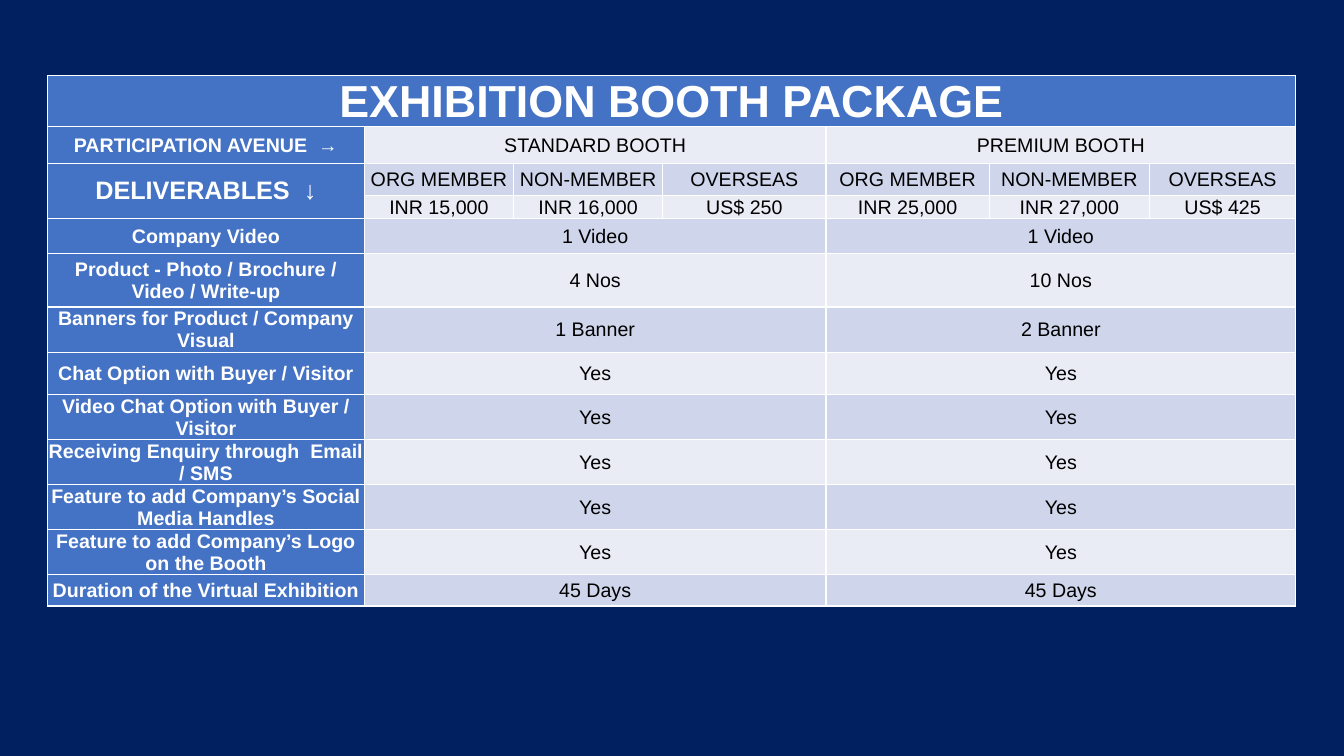
from dataclasses import dataclass

import lxml.etree
import pptx
import pptx.dml.color
import pptx.enum.text
import pptx.oxml.ns
import pptx.table
import pptx.util

COLORS: dict[str, str] = {
    "background": "002060",
    "header": "4472C4",
    "odd_band": "E9EBF5",
    "even_band": "CFD5EA",
    "border": "FFFFFF",
    "header_text": "FFFFFF",
    "body_text": "000000",
}
COLUMN_WIDTHS = [226.3, 106.6, 106.6, 116.6, 116.6, 114.5, 104.4]
ROW_HEIGHTS = [33.1, 25.9, 23, 12.2, 25.2, 38.2, 31, 30.2, 25.2, 25.2, 25.2, 25.2, 22.3]
TABLE_LEFT, TABLE_TOP = 34, 54
BORDER_WIDTH = 1
BOOTH_COLUMNS = (1, 4)
TIERS_PER_BOOTH = 3
FIRST_DELIVERABLE_ROW = 4
CELL_FORMAT = {
    "margin_left": pptx.util.Pt(0.72),
    "margin_top": pptx.util.Pt(0.72),
    "margin_right": pptx.util.Pt(0.72),
    "margin_bottom": pptx.util.Pt(0),
    "vertical_anchor": pptx.enum.text.MSO_ANCHOR.MIDDLE,
}


@dataclass(frozen=True)
class Entry:
    row: int
    column: int
    text: str
    row_span: int = 1
    column_span: int = 1
    size: float = 14


@dataclass(frozen=True)
class Deliverable:
    name: str
    standard: str
    premium: str


DELIVERABLES = [
    Deliverable("Company Video", "1 Video", "1 Video"),
    Deliverable("Product - Photo / Brochure / Video / Write-up", "4 Nos", "10 Nos"),
    Deliverable("Banners for Product / Company Visual", "1 Banner", "2 Banner"),
    Deliverable("Chat Option with Buyer / Visitor", "Yes", "Yes"),
    Deliverable("Video Chat Option with Buyer / Visitor", "Yes", "Yes"),
    Deliverable("Receiving Enquiry through  Email / SMS", "Yes", "Yes"),
    Deliverable("Feature to add Company’s Social Media Handles", "Yes", "Yes"),
    Deliverable("Feature to add Company’s Logo on the Booth", "Yes", "Yes"),
    Deliverable("Duration of the Virtual Exhibition", "45 Days", "45 Days"),
]
TIERS = ["ORG MEMBER", "NON-MEMBER", "OVERSEAS"]
PRICES = ["INR 15,000", "INR 16,000", "US$ 250", "INR 25,000", "INR 27,000", "US$ 425"]


def rgb(name: str) -> pptx.dml.color.RGBColor:
    return pptx.dml.color.RGBColor.from_string(COLORS[name])


def is_header(row: int, column: int) -> bool:
    return row == 0 or column == 0


def booth_row(row: int, name: str, standard: str, premium: str) -> list[Entry]:
    offers = [
        Entry(row, column, offer, column_span=TIERS_PER_BOOTH)
        for column, offer in zip(BOOTH_COLUMNS, (standard, premium))
    ]
    return [Entry(row, 0, name), *offers]


def package_entries() -> list[Entry]:
    entries = [
        Entry(0, 0, "EXHIBITION BOOTH PACKAGE", column_span=len(COLUMN_WIDTHS), size=32),
        *booth_row(1, "PARTICIPATION AVENUE  →", "STANDARD BOOTH", "PREMIUM BOOTH"),
        Entry(2, 0, "DELIVERABLES  ↓", row_span=2, size=18),
    ]
    for row, labels in ((2, TIERS * len(BOOTH_COLUMNS)), (3, PRICES)):
        entries += [Entry(row, column, label) for column, label in enumerate(labels, 1)]
    for row, item in enumerate(DELIVERABLES, FIRST_DELIVERABLE_ROW):
        entries += booth_row(row, item.name, item.standard, item.premium)
    return entries


def add_borders(cell: pptx.table._Cell) -> None:
    properties = cell._tc.get_or_add_tcPr()
    qn = pptx.oxml.ns.qn
    for side in ("lnL", "lnR", "lnT", "lnB"):
        width = str(pptx.util.Pt(BORDER_WIDTH))
        line = lxml.etree.SubElement(properties, qn(f"a:{side}"), w=width)
        fill = lxml.etree.SubElement(line, qn("a:solidFill"))
        lxml.etree.SubElement(fill, qn("a:srgbClr"), val=COLORS["border"])


def format_cell(cell: pptx.table._Cell, row: int, column: int) -> None:
    for attribute, value in CELL_FORMAT.items():
        setattr(cell, attribute, value)
    add_borders(cell)
    band = "odd_band" if row % 2 else "even_band"
    cell.fill.solid()
    cell.fill.fore_color.rgb = rgb("header" if is_header(row, column) else band)


def write_entry(table: pptx.table.Table, entry: Entry) -> None:
    cell = table.cell(entry.row, entry.column)
    if entry.row_span * entry.column_span > 1:
        last_row = entry.row + entry.row_span - 1
        last_column = entry.column + entry.column_span - 1
        cell.merge(table.cell(last_row, last_column))
    header = is_header(entry.row, entry.column)
    paragraph = cell.text_frame.paragraphs[0]
    paragraph.alignment = pptx.enum.text.PP_ALIGN.CENTER
    run = paragraph.add_run()
    run.text = entry.text
    font_format = {"name": "Arial", "size": pptx.util.Pt(entry.size), "bold": header}
    for attribute, value in font_format.items():
        setattr(run.font, attribute, value)
    run.font.color.rgb = rgb("header_text" if header else "body_text")


def main() -> None:
    deck = pptx.Presentation()
    deck.slide_width = pptx.util.Pt(960)
    deck.slide_height = pptx.util.Pt(540)
    slide = deck.slides.add_slide(deck.slide_layouts[6])
    slide.background.fill.solid()
    slide.background.fill.fore_color.rgb = rgb("background")

    bounds = (TABLE_LEFT, TABLE_TOP, sum(COLUMN_WIDTHS), sum(ROW_HEIGHTS))
    packages = slide.shapes.add_table(
        len(ROW_HEIGHTS), len(COLUMN_WIDTHS), *map(pptx.util.Pt, bounds)
    ).table
    packages.first_row = False
    packages.horz_banding = False
    for column, width in zip(packages.columns, COLUMN_WIDTHS):
        column.width = pptx.util.Pt(width)
    for row, height in zip(packages.rows, ROW_HEIGHTS):
        row.height = pptx.util.Pt(height)
    for row_index in range(len(ROW_HEIGHTS)):
        for column_index in range(len(COLUMN_WIDTHS)):
            format_cell(packages.cell(row_index, column_index), row_index, column_index)
    for entry in package_entries():
        write_entry(packages, entry)
    deck.save("out.pptx")


if __name__ == "__main__":
    main()
